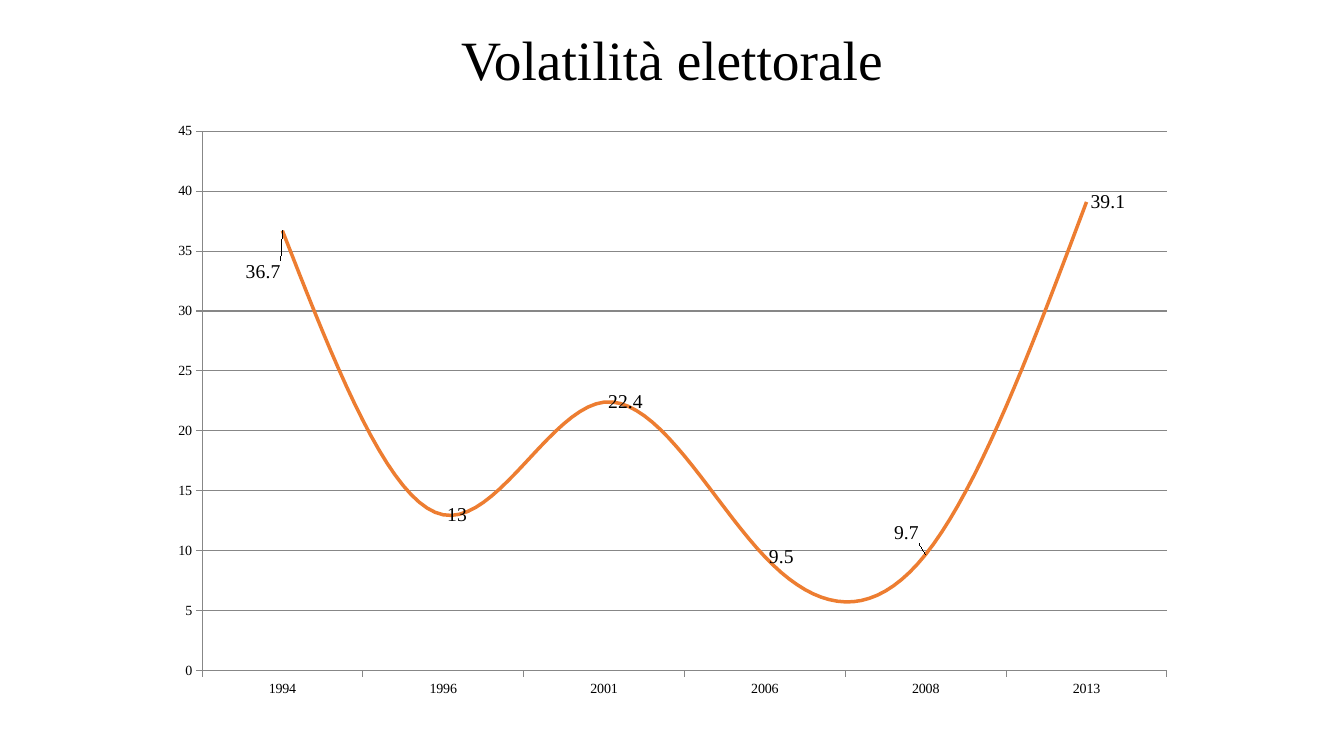
from lxml import etree
from pptx import Presentation
from pptx.chart.data import CategoryChartData
from pptx.dml.color import RGBColor
from pptx.enum.chart import XL_CHART_TYPE, XL_LABEL_POSITION, XL_TICK_MARK
from pptx.enum.text import MSO_ANCHOR, MSO_AUTO_SIZE, PP_ALIGN
from pptx.oxml.ns import qn
from pptx.util import Cm, Pt

LINE_CHART = XL_CHART_TYPE.LINE
RIGHT = XL_LABEL_POSITION.RIGHT
TICK_OUT, TICK_NONE = XL_TICK_MARK.OUTSIDE, XL_TICK_MARK.NONE
MIDDLE, CENTER, NO_FIT = MSO_ANCHOR.MIDDLE, PP_ALIGN.CENTER, MSO_AUTO_SIZE.NONE

BLACK = RGBColor(0x00, 0x00, 0x00)
GREY = RGBColor(0x87, 0x87, 0x87)
ORANGE = RGBColor(0xED, 0x7D, 0x31)

VOLATILITY = {"1994": 36.7, "1996": 13, "2001": 22.4,
              "2006": 9.5, "2008": 9.7, "2013": 39.1}
# Label shifts, as fractions of the chart's width and height
LABEL_SHIFTS = {"1994": (-0.04, 0.07), "2008": (-0.035, -0.037)}
PLOT_AREA = {"layoutTarget": "inner", "xMode": "edge", "yMode": "edge",
             "x": 0.039, "y": 0.016, "w": 0.947, "h": 0.918}


def apply(target, **values):
    for name, value in values.items():
        setattr(target, name, value)


def manual_layout(**values):
    layout = etree.Element(qn("c:layout"))
    manual = etree.SubElement(layout, qn("c:manualLayout"))
    for name, value in values.items():
        etree.SubElement(manual, qn(f"c:{name}")).set("val", str(value))
    return layout


class SlideBuilder:
    face = "Times New Roman"

    def __init__(self, page):
        self.page = page

    def style_font(self, font, size):
        apply(font, name=self.face, size=Pt(size), bold=False)
        font.color.rgb = BLACK

    def style_line(self, line, color, width):
        line.color.rgb = color
        line.width = Pt(width)

    def title(self, text, left, top, width, height):
        box = self.page.shapes.title
        apply(box, left=Cm(left), top=Cm(top), width=Cm(width), height=Cm(height))
        apply(box.text_frame, text=text, vertical_anchor=MIDDLE,
              auto_size=NO_FIT, word_wrap=True)
        para = box.text_frame.paragraphs[0]
        apply(para, alignment=CENTER, line_spacing=0.9)
        self.style_font(para.runs[0].font, 39.6)

    def axis(self, axis, gridlines):
        apply(axis, has_major_gridlines=gridlines, major_tick_mark=TICK_OUT,
              minor_tick_mark=TICK_NONE)
        self.style_font(axis.tick_labels.font, 10)
        self.style_line(axis.format.line, GREY, 0.75)
        if gridlines:
            self.style_line(axis.major_gridlines.format.line, GREY, 0.75)

    def line_chart(self, values, shifts, left, top, width, height):
        data = CategoryChartData(number_format="General")
        data.categories = list(values)
        data.add_series("Series 1", list(values.values()))
        chart = self.page.shapes.add_chart(
            LINE_CHART, Cm(left), Cm(top), Cm(width), Cm(height), data).chart
        apply(chart, has_title=False, has_legend=False)
        apply(chart.font, name="Calibri", size=Pt(10))
        plot = chart.plots[0]
        plot.vary_by_categories = False

        # Axes
        self.axis(chart.category_axis, False)
        self.axis(chart.value_axis, True)
        apply(chart.value_axis, minimum_scale=0, maximum_scale=45, major_unit=5)

        # Curve and its labels
        series = plot.series[0]
        series.smooth = True
        self.style_line(series.format.line, ORANGE, 2.5)
        labels = series.data_labels
        apply(labels, show_value=True, position=RIGHT)
        self.style_font(labels.font, 14)
        years = list(values)
        for year in shifts:
            label = series.points[years.index(year)].data_label
            self.style_font(label.font, 14)
            label.position = RIGHT
        root = chart._chartSpace
        for element, (x, y) in zip(root.xpath(".//c:dLbl"), shifts.values()):
            element.insert(1, manual_layout(x=x, y=y))

        # Inner plot area
        area = root.xpath(".//c:plotArea")[0]
        for layout in area.xpath("./c:layout"):
            area.remove(layout)
        area.insert(0, manual_layout(**PLOT_AREA))


def main():
    deck = Presentation()
    apply(deck, slide_width=Cm(33.87), slide_height=Cm(19.05))
    builder = SlideBuilder(deck.slides.add_slide(deck.slide_layouts[5]))
    builder.title("Volatilità elettorale", 5.51, 0.76, 22.86, 1.63)
    builder.line_chart(VOLATILITY, LABEL_SHIFTS, 4.09, 3.07, 25.68, 14.81)
    deck.save("out.pptx")


if __name__ == "__main__":
    main()
